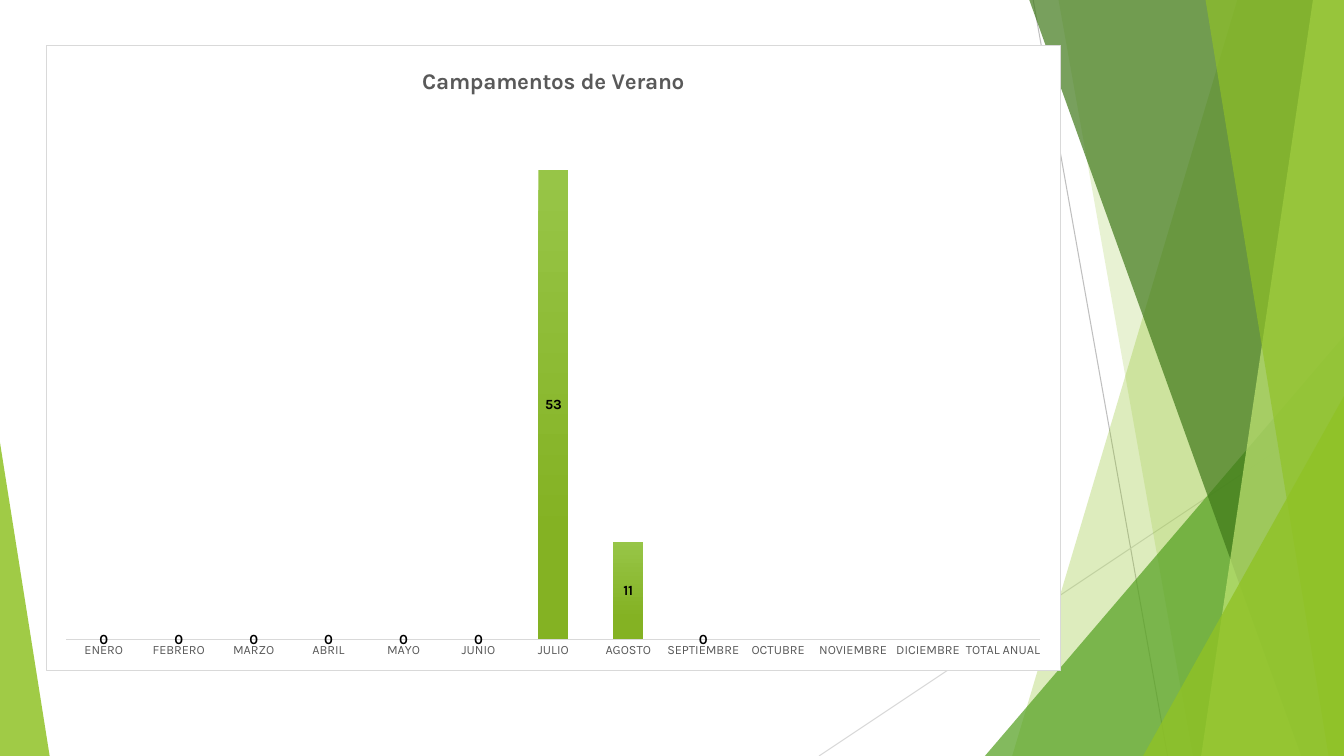
"""Build the summer camps slide: green facet background and a monthly column chart."""
from lxml.etree import SubElement
from pptx import Presentation
from pptx.chart.data import CategoryChartData
from pptx.dml.color import RGBColor
from pptx.enum.chart import XL_CHART_TYPE, XL_TICK_MARK
from pptx.enum.shapes import MSO_CONNECTOR, MSO_SHAPE
from pptx.oxml import parse_xml
from pptx.oxml.ns import nsdecls, qn
from pptx.util import Pt

COLORS = {
    "lime": "90C226", "green": "54A021", "forest": "3F7819", "pale": "C0E474",
    "bar_top": "97C547", "bar_bottom": "84B223", "white": "FFFFFF",
    "black": "000000", "text": "595959", "gray": "BFBFBF", "light_gray": "D9D9D9",
}
WIDTH, HEIGHT = 960, 540


def rgb(name):
    return RGBColor.from_string(COLORS[name])


def paint(shape, color, opacity):
    shape.shadow.inherit = False
    shape.fill.solid()
    shape.fill.fore_color.rgb = rgb(color)
    shape.line.fill.background()
    color_node = shape.fill._xPr.find(qn("a:solidFill"))[0]
    SubElement(color_node, qn("a:alpha"), val=str(opacity * 1000))


deck = Presentation()
deck.slide_width, deck.slide_height = Pt(WIDTH), Pt(HEIGHT)
page = deck.slides.add_slide(deck.slide_layouts[6])

for x1, y1, x2, y2, color in [
    (738, 0, 834, HEIGHT, "gray"),
    (WIDTH, 290, 585, HEIGHT, "light_gray"),
]:
    line = page.shapes.add_connector(MSO_CONNECTOR.STRAIGHT, Pt(x1), Pt(y1), Pt(x2), Pt(y2))
    line.line.color.rgb = rgb(color)
    line.line.width = Pt(0.75)
    SubElement(line._element.spPr, qn("a:effectLst"))

facets = [
    ("band", 884, 723, "lime", 30),
    ("band", 756, 852, "lime", 20),
    ("triangle", 703.5, 240, "green", 72),
    ("band", 735, 929.5, "forest", 70),
    ("band", 938, 858, "pale", 70),
    ("band", 861, 949, "lime", 65),
    ("triangle", 816.5, 283, "lime", 80),
]
for kind, first, second, color, opacity in facets:
    if kind == "band":
        outline = page.shapes.build_freeform(Pt(first), Pt(-0.7))
        corners = [(WIDTH, -0.7), (WIDTH, HEIGHT), (second, HEIGHT)]
        outline.add_line_segments([(Pt(x), Pt(y)) for x, y in corners], close=True)
        facet = outline.convert_to_shape()
    else:
        facet = page.shapes.add_shape(
            MSO_SHAPE.ISOSCELES_TRIANGLE, Pt(first), Pt(second), Pt(WIDTH - first), Pt(HEIGHT - second))
        facet.adjustments[0] = 1
    paint(facet, color, opacity)

left_facet = page.shapes.add_shape(MSO_SHAPE.ISOSCELES_TRIANGLE, 0, Pt(316), Pt(35.5), Pt(224))
left_facet.adjustments[0] = 0
paint(left_facet, "lime", 85)

data = CategoryChartData()
data.categories = [
    "ENERO", "FEBRERO", "MARZO", "ABRIL", "MAYO", "JUNIO", "JULIO", "AGOSTO",
    "SEPTIEMBRE", "OCTUBRE", "NOVIEMBRE", "DICIEMBRE", "TOTAL ANUAL",
]
data.add_series("Series 1", [0] * 6 + [53, 11, 0] + [None] * 4)
chart = page.shapes.add_chart(
    XL_CHART_TYPE.COLUMN_STACKED, Pt(32.5), Pt(32), Pt(725.5), Pt(447.5), data).chart
chart.has_legend = False
chart.has_title = True
chart.chart_title.include_in_layout = False
chart.chart_title.text_frame.text = "Campamentos de Verano"
title_span = chart.chart_title.text_frame.paragraphs[0].runs[0]

months = chart.category_axis
months.major_tick_mark = XL_TICK_MARK.NONE
months.format.line.color.rgb = rgb("light_gray")
months.format.line.width = Pt(1)
amounts = chart.value_axis
amounts.minimum_scale, amounts.maximum_scale = 0, 60
amounts.has_major_gridlines = False
amounts.visible = False

plot = chart.plots[0]
plot.gap_width, plot.overlap = 150, 100
plot.vary_by_categories = False
bars = plot.series[0]
bars.format.fill.gradient()
bars.format.fill.gradient_angle = 270
for stop, position, color in zip(bars.format.fill.gradient_stops, (0, 0.78), ("bar_top", "bar_bottom")):
    stop.position = position
    stop.color.rgb = rgb(color)
labels = bars.data_labels
labels.show_value = True

for font, size, bold, color in [
    (chart.font, 10, False, "black"),
    (title_span.font, 16, True, "text"),
    (months.tick_labels.font, 9, False, "text"),
    (labels.font, 10, True, "black"),
]:
    for name, value in {"name": "Karla", "size": Pt(size), "bold": bold}.items():
        setattr(font, name, value)
    font.color.rgb = rgb(color)

chart_node = chart._chartSpace.find(qn("c:chart"))
chart_node.addnext(parse_xml(
    f'<c:spPr {nsdecls("c", "a")}>'
    f'<a:solidFill><a:srgbClr val="{COLORS["white"]}"/></a:solidFill>'
    f'<a:ln w="{Pt(0.75)}"><a:solidFill><a:srgbClr val="{COLORS["light_gray"]}"/></a:solidFill></a:ln>'
    '</c:spPr>'))
plot_area = chart_node.find(qn("c:plotArea"))
for layout in plot_area.findall(qn("c:layout")):
    plot_area.remove(layout)
layout = parse_xml(f'<c:layout {nsdecls("c")}><c:manualLayout/></c:layout>')
plot_area.insert(0, layout)
for tag, value in [
    ("layoutTarget", "inner"), ("xMode", "edge"), ("yMode", "edge"),
    ("x", "0.02"), ("y", "0.1"), ("w", "0.96"), ("h", "0.85"),
]:
    SubElement(layout[0], qn(f"c:{tag}"), val=value)

deck.save("out.pptx")
